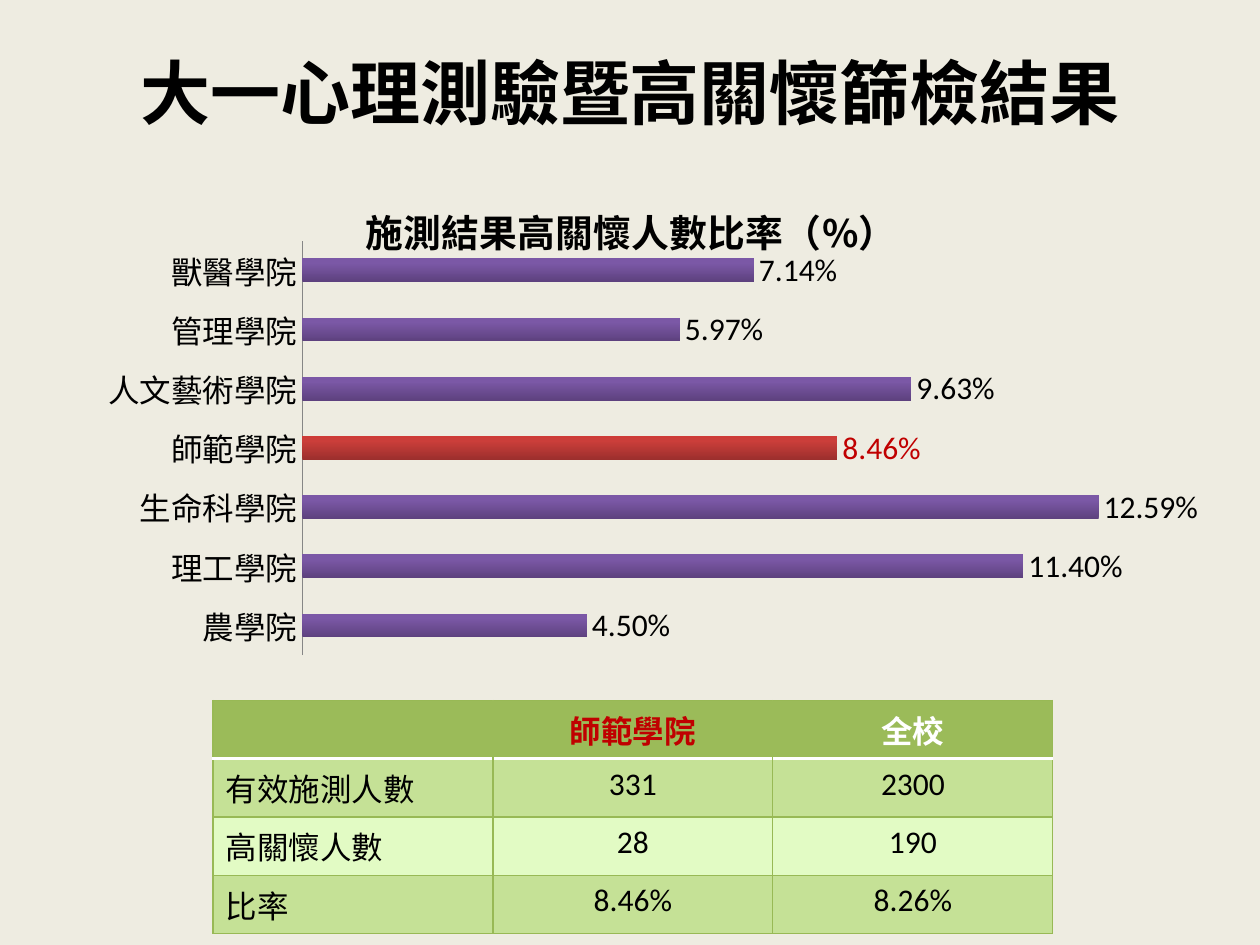
from lxml import etree
from pptx import Presentation
from pptx.chart.data import CategoryChartData
from pptx.dml.color import RGBColor
from pptx.enum import chart as ch, text as tx
from pptx.oxml import ns, parse_xml
from pptx.util import Pt

COLORS = {"back": "EEECE1", "ink": "000000", "accent": "C00000", "white": "FFFFFF",
          "axis": "868686", "head": "9BBB59", "rule": "98B955",
          "band": "C5E196", "plain": "E2FBC4"}
PURPLE = ("5D417E", "7B58A6", "7B57A8")
RED = ("9C2F2D", "CB3E3A", "CE3B37")
CJK = "Noto Sans CJK SC"
CHART_TITLE = "施測結果高關懷人數比率（%）"
RATES = {"農學院": 0.045, "理工學院": 0.114, "生命科學院": 0.1259, "師範學院": 0.0846,
         "人文藝術學院": 0.0963, "管理學院": 0.0597, "獸醫學院": 0.0714}
ROWS = [("", "師範學院", "全校"), ("有效施測人數", "331", "2300"),
        ("高關懷人數", "28", "190"), ("比率", "8.46%", "8.26%")]


def rgb(name):
    """Return the named colour."""
    return RGBColor.from_string(COLORS[name])


def style_font(font, color="ink", **values):
    """Set the colour and any other font attributes."""
    for key, value in values.items():
        setattr(font, key, value)
    font.color.rgb = rgb(color)


def write(p, words, align, color="ink", **values):
    """Put one formatted run in a paragraph."""
    p.alignment = align
    r = p.add_run()
    r.text = words
    style_font(r.font, color, **values)
    ea = etree.SubElement(r.font._element, ns.qn("a:ea"))
    ea.set("typeface", CJK)


def gradient(fmt, shades):
    """Shade a bar from its lower edge to its upper edge."""
    fmt.fill.gradient()
    stops = "".join(f'<a:gs pos="{pos}"><a:srgbClr val="{c}"/></a:gs>'
                    for pos, c in zip((0, 80000, 100000), shades))
    new = parse_xml(f'<a:gradFill {ns.nsdecls("a")} rotWithShape="1"><a:gsLst>{stops}</a:gsLst>'
                    '<a:lin ang="16200000" scaled="0"/></a:gradFill>')
    sp_pr = fmt.fill._xPr
    sp_pr.replace(sp_pr.find(ns.qn("a:gradFill")), new)


def place_plot(chart, **box):
    """Fix the inner plot area as fractions of the chart."""
    area = chart._chartSpace.chart.plotArea
    for old in area.findall(ns.qn("c:layout")):
        area.remove(old)
    sizes = "".join(f'<c:{k} val="{v}"/>' for k, v in box.items())
    area.insert(0, parse_xml(
        f'<c:layout {ns.nsdecls("c")}><c:manualLayout><c:layoutTarget val="inner"/>'
        f'<c:xMode val="edge"/><c:yMode val="edge"/>{sizes}</c:manualLayout></c:layout>'))


def add_title(s, words):
    """Fill and place the slide title."""
    sp = s.shapes.title
    for key, value in dict(left=36, top=21.6, width=648, height=61.2).items():
        setattr(sp, key, Pt(value))
    tf = sp.text_frame
    tf.vertical_anchor = tx.MSO_ANCHOR.MIDDLE
    write(tf.paragraphs[0], words, tx.PP_ALIGN.CENTER, size=Pt(40), bold=True, name=CJK)


def add_rates(s):
    """Add the bar chart of rates with one college singled out."""
    data = CategoryChartData(number_format="0.00%")
    data.categories = list(RATES)
    data.add_series(CHART_TITLE, list(RATES.values()))
    chart = s.shapes.add_chart(ch.XL_CHART_TYPE.BAR_CLUSTERED, Pt(36.72), Pt(100.08),
                               Pt(648), Pt(285.84), data).chart
    style_font(chart.font, size=Pt(18), name="Calibri")
    chart.has_legend = False
    chart.has_title = True
    title = chart.chart_title
    title.include_in_layout = True
    write(title.text_frame.paragraphs[0], CHART_TITLE, tx.PP_ALIGN.CENTER,
          size=Pt(21.6), bold=True, name=CJK)
    place_plot(chart, x=0.21, y=0.131, w=0.781, h=0.829)

    axis = chart.category_axis
    axis.major_tick_mark = ch.XL_TICK_MARK.NONE
    axis.format.line.color.rgb = rgb("axis")
    axis.format.line.width = Pt(0.75)
    values = dict(minimum_scale=0, maximum_scale=0.14, has_major_gridlines=False, visible=False)
    for key, value in values.items():
        setattr(chart.value_axis, key, value)

    plot = chart.plots[0]
    plot.gap_width, plot.overlap, plot.vary_by_categories = 150, -25, False
    series = plot.series[0]
    series.invert_if_negative = False
    gradient(series.format, PURPLE)
    labels = series.data_labels
    label_values = dict(show_value=True, number_format="0.00%", number_format_is_linked=False,
                        position=ch.XL_LABEL_POSITION.OUTSIDE_END)
    for key, value in label_values.items():
        setattr(labels, key, value)
    style_font(labels.font, size=Pt(18), name="Calibri")
    point = series.points[list(RATES).index("師範學院")]
    gradient(point.format, RED)
    style_font(point.data_label.font, "accent", size=Pt(18), name="Calibri")
    point.data_label.position = ch.XL_LABEL_POSITION.OUTSIDE_END


def set_borders(cell, **sides):
    """Draw the given cell sides, each as a colour name and a width."""
    tc_pr = cell._tc.get_or_add_tcPr()
    for i, (side, (color, width)) in enumerate(sides.items()):
        tc_pr.insert(i, parse_xml(
            f'<a:ln{side} {ns.nsdecls("a")} w="{Pt(width)}"><a:solidFill>'
            f'<a:srgbClr val="{COLORS[color]}"/></a:solidFill></a:ln{side}>'))


def add_counts(s):
    """Add the table that compares the college with the whole school."""
    table = s.shapes.add_table(len(ROWS), 3, Pt(121.68), Pt(400.32), Pt(480), Pt(116.8)).table
    thin, thick, header = ("rule", 0.75), ("white", 2), ("head", 0.75)
    for i, row in enumerate(ROWS):
        for j, words in enumerate(row):
            cell = table.cell(i, j)
            cell.fill.solid()
            cell.fill.fore_color.rgb = rgb("head" if i == 0 else "band" if i % 2 else "plain")
            inner = header if i == 0 else thin
            set_borders(cell, L=thin if j == 0 else inner, R=thin if j == 2 else inner,
                        T=thick if i == 1 else thin, B=thick if i == 0 else thin)
            color = ("ink", "accent", "white")[j] if i == 0 else "ink"
            align = tx.PP_ALIGN.CENTER if j else tx.PP_ALIGN.LEFT
            p = cell.text_frame.paragraphs[0]
            p.font.size = Pt(18)
            if words:
                write(p, words, align, color, size=Pt(18), bold=i == 0, name="Calibri")


def main():
    """Build the slide and save it."""
    prs = Presentation()
    prs.slide_width, prs.slide_height = Pt(720), Pt(540)
    s = prs.slides.add_slide(prs.slide_layouts[5])
    s.background.fill.solid()
    s.background.fill.fore_color.rgb = rgb("back")
    add_title(s, "大一心理測驗暨高關懷篩檢結果")
    add_rates(s)
    add_counts(s)
    prs.save("out.pptx")


if __name__ == "__main__":
    main()
